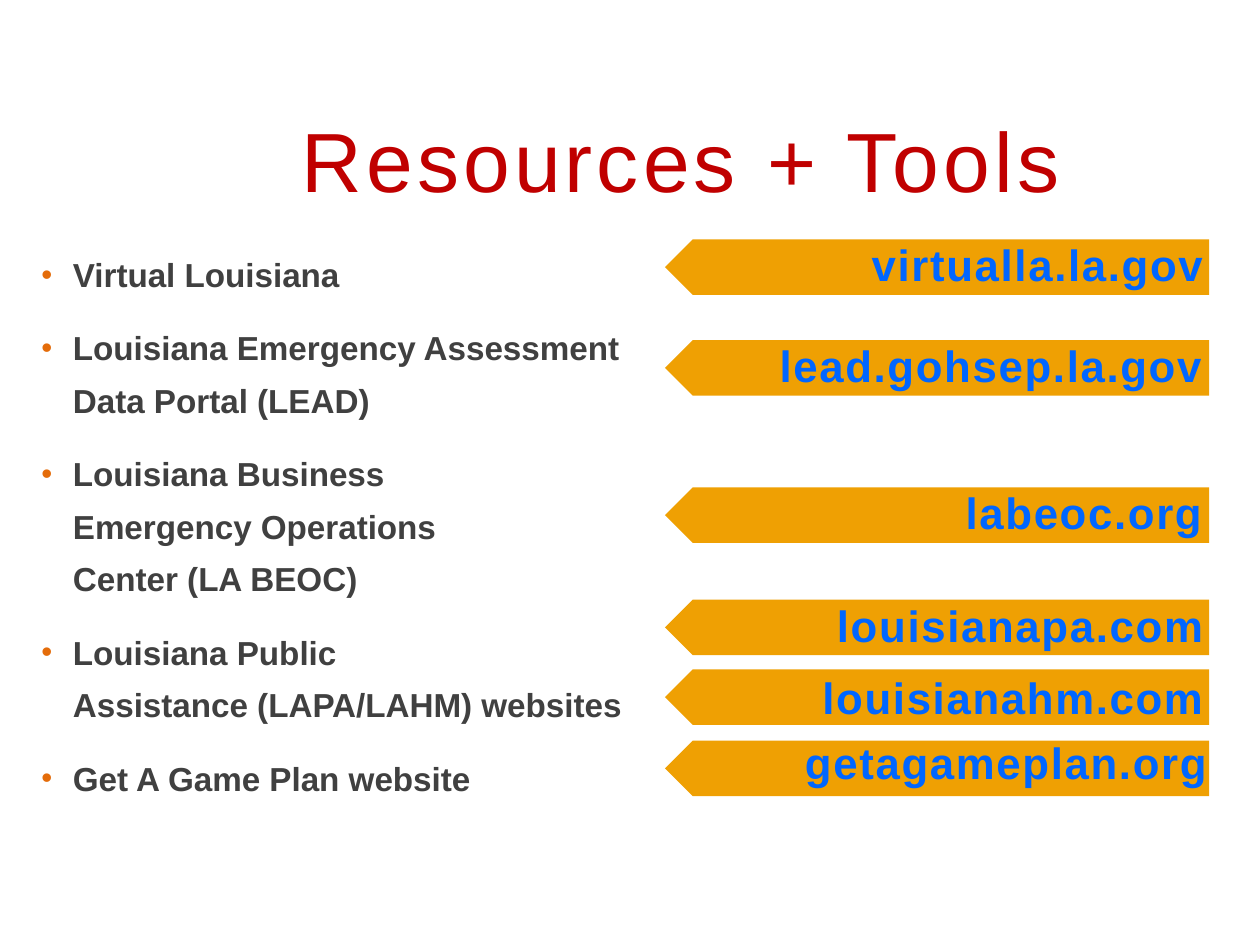
from lxml import etree
from pptx import Presentation
from pptx.dml.color import RGBColor
from pptx.enum.shapes import MSO_SHAPE
from pptx.enum.text import MSO_ANCHOR, PP_ALIGN
from pptx.oxml.ns import qn
from pptx.util import Pt

RIGHT = PP_ALIGN.RIGHT
MIDDLE = MSO_ANCHOR.MIDDLE
PENTAGON = MSO_SHAPE.PENTAGON

COLORS = {"title": "C00000", "body": "404040", "bullet": "E46C0A",
          "arrow": "EFA003", "link": "0066FF"}
FONT = "Arial"

TITLE = "Resources + Tools"
RESOURCES = [
    "Virtual Louisiana",
    "Louisiana Emergency Assessment Data Portal (LEAD)",
    "Louisiana Business\nEmergency Operations\nCenter (LA BEOC)",
    "Louisiana Public\nAssistance (LAPA/LAHM) websites",
    "Get A Game Plan website",
]
ARROW_TOPS = [136.8, 194.4, 278.6, 342.7, 382.5, 423.2]
ARROW_LEFT, ARROW_WIDTH, ARROW_HEIGHT = 380, 311, 31.7
LINKS = [
    (["virtualla.la.gov"], (409.7, 132.5, 285.1, 41)),
    (["lead.gohsep.la.gov"], (427.7, 190.1, 266.4, 41)),
    (["labeoc.org"], (483.8, 274.3, 210.2, 46.8)),
    (["louisianapa.com", "louisianahm.com"], (388.1, 338.4, 306.7, 51.1)),
    (["getagameplan.org"], (393.8, 416.9, 303.1, 50.4)),
]
LINK_GAP = 11.2


def style(p, size, color, bold=False, spacing=0):
    for r in p.runs:
        r.font.name = FONT
        r.font.size = Pt(size)
        r.font.bold = bold
        r.font.color.rgb = RGBColor.from_string(COLORS[color])
        if spacing:
            r._r.get_or_add_rPr().set("spc", str(round(spacing * 100)))


def add_bullet(p):
    pPr = p._p.get_or_add_pPr()
    pPr.set("marL", str(Pt(18)))
    pPr.set("indent", str(-Pt(18)))
    clr = etree.SubElement(pPr, qn("a:buClr"))
    etree.SubElement(clr, qn("a:srgbClr"), val=COLORS["bullet"])
    etree.SubElement(pPr, qn("a:buSzPct"), val="94000")
    etree.SubElement(pPr, qn("a:buFont"), typeface=FONT)
    etree.SubElement(pPr, qn("a:buChar"), char="•")


def add_text(s, box, lines):
    tf = s.shapes.add_textbox(*map(Pt, box)).text_frame
    tf.word_wrap = True
    for i, line in enumerate(lines):
        p = tf.paragraphs[0] if i == 0 else tf.add_paragraph()
        p.text = line
    return tf.paragraphs


prs = Presentation()
prs.slide_width, prs.slide_height = Pt(720), Pt(540)
s = prs.slides.add_slide(prs.slide_layouts[5])

for top in ARROW_TOPS:
    sp = s.shapes.add_shape(PENTAGON, Pt(ARROW_LEFT), Pt(top),
                            Pt(ARROW_WIDTH), Pt(ARROW_HEIGHT))
    sp._element.spPr.find(qn("a:xfrm")).set("flipH", "1")
    sp.shadow.inherit = False
    sp.fill.solid()
    sp.fill.fore_color.rgb = RGBColor.from_string(COLORS["arrow"])
    sp.line.fill.background()

title = s.shapes.title
title.left, title.top, title.width, title.height = map(Pt, (36, 60.5, 577.4, 61.2))
tf = title.text_frame
tf.text = TITLE
tf.vertical_anchor = MIDDLE
tf.paragraphs[0].alignment = RIGHT
style(tf.paragraphs[0], 48, "title", spacing=2.4)

for i, p in enumerate(add_text(s, (16.6, 134.6, 376.6, 352), RESOURCES)):
    add_bullet(p)
    p.line_spacing = Pt(30)
    p.space_before = Pt(12 if i else 0)
    style(p, 19, "body", bold=True)

for lines, box in LINKS:
    for i, p in enumerate(add_text(s, box, lines)):
        p.alignment = RIGHT
        p.space_before = Pt(LINK_GAP if i else 0)
        style(p, 25, "link", bold=True, spacing=1)

prs.save("out.pptx")
